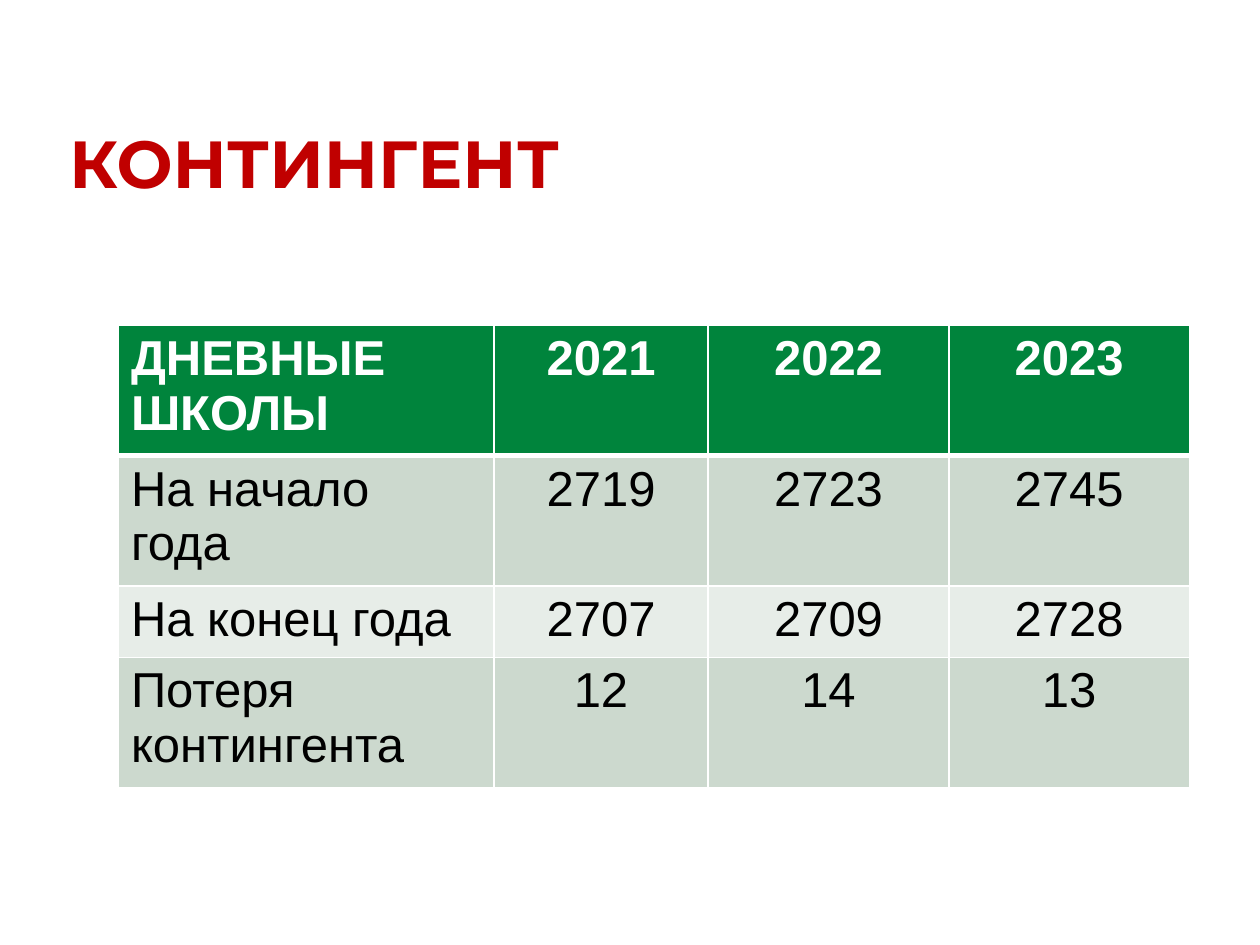
from dataclasses import dataclass

from lxml import etree
from pptx import Presentation
from pptx import util as u
from pptx.dml import color
from pptx.enum import text
from pptx.oxml import ns

WHITE = "FFFFFF"
COLUMN_WIDTHS = (214.5, 122.5, 137.5, 137.5)
ROW_HEIGHT = 29.5


@dataclass(frozen=True)
class RowStyle:
    fill: str
    font_color: str = "000000"
    bold: bool = False


@dataclass(frozen=True)
class TableRow:
    values: tuple[str, ...]
    style: RowStyle


HEADER = RowStyle("00843C", WHITE, True)
DARK_BAND = RowStyle("CCD9CE")
LIGHT_BAND = RowStyle("E7EDE8")
ROWS = (
    TableRow(("ДНЕВНЫЕ ШКОЛЫ", "2021", "2022", "2023"), HEADER),
    TableRow(("На начало года", "2719", "2723", "2745"), DARK_BAND),
    TableRow(("На конец года", "2707", "2709", "2728"), LIGHT_BAND),
    TableRow(("Потеря контингента", "12", "14", "13"), DARK_BAND),
)


def rgb(value: str) -> color.RGBColor:
    return color.RGBColor.from_string(value)


def set_attributes(target, values: dict) -> None:
    for name, value in values.items():
        setattr(target, name, value)


def write_text(paragraph, content: str, font_color: str, font_format: dict):
    run = paragraph.add_run()
    run.text = content
    set_attributes(run.font, font_format)
    run.font.color.rgb = rgb(font_color)
    return run


def add_line(parent, tag: str, width: float, line_color: str):
    line = etree.SubElement(parent, ns.qn(tag), w=str(u.Pt(width)))
    fill = etree.SubElement(line, ns.qn("a:solidFill"))
    etree.SubElement(fill, ns.qn("a:srgbClr"), val=line_color)
    return line


def set_borders(cell, bottom: float, top: float) -> None:
    properties = cell._tc.get_or_add_tcPr()
    widths = {"a:lnL": 1, "a:lnR": 1, "a:lnT": top, "a:lnB": bottom}
    for position, (tag, width) in enumerate(widths.items()):
        properties.insert(position, add_line(properties, tag, width, WHITE))


def add_title(slide, content: str) -> None:
    box = slide.shapes.add_textbox(u.Pt(36), u.Pt(25.2), u.Pt(570.25), u.Pt(90))
    set_attributes(box.text_frame, {
        "word_wrap": True,
        "vertical_anchor": text.MSO_ANCHOR.BOTTOM,
        "margin_left": u.Pt(3.6),
        "margin_right": u.Pt(3.6),
        "margin_top": 0,
        "margin_bottom": 0,
    })
    run = write_text(box.text_frame.paragraphs[0], content, "C00000",
                     {"name": "Montserrat", "size": u.Pt(38), "bold": True})
    # Thin outline around the letters
    properties = run.font._element
    properties.insert(0, add_line(properties, "a:ln", 0.04, "005728"))


def add_student_table(slide, rows: tuple[TableRow, ...]) -> None:
    frame = slide.shapes.add_table(
        len(rows), len(COLUMN_WIDTHS), u.Pt(67.7), u.Pt(185.8),
        u.Pt(sum(COLUMN_WIDTHS)), u.Pt(ROW_HEIGHT * len(rows)))
    table = frame.table
    for column, width in zip(table.columns, COLUMN_WIDTHS):
        column.width = u.Pt(width)
    for row_index, row in enumerate(rows):
        table.rows[row_index].height = u.Pt(ROW_HEIGHT)
        for column_index, value in enumerate(row.values):
            cell = table.cell(row_index, column_index)
            cell.fill.solid()
            cell.fill.fore_color.rgb = rgb(row.style.fill)
            set_borders(cell, bottom=3 if row_index == 0 else 1,
                        top=3 if row_index == 1 else 1)
            paragraph = cell.text_frame.paragraphs[0]
            if column_index:
                paragraph.alignment = text.PP_ALIGN.CENTER
            write_text(paragraph, value, row.style.font_color,
                       {"name": "Arial", "size": u.Pt(28), "bold": row.style.bold})


def main() -> None:
    presentation = Presentation()
    set_attributes(presentation, {"slide_width": u.Pt(720), "slide_height": u.Pt(540)})
    slide = presentation.slides.add_slide(presentation.slide_layouts[6])

    # Heading
    add_title(slide, "КОНТИНГЕНТ")

    # Student numbers by year
    add_student_table(slide, ROWS)

    presentation.save("out.pptx")


if __name__ == "__main__":
    main()
